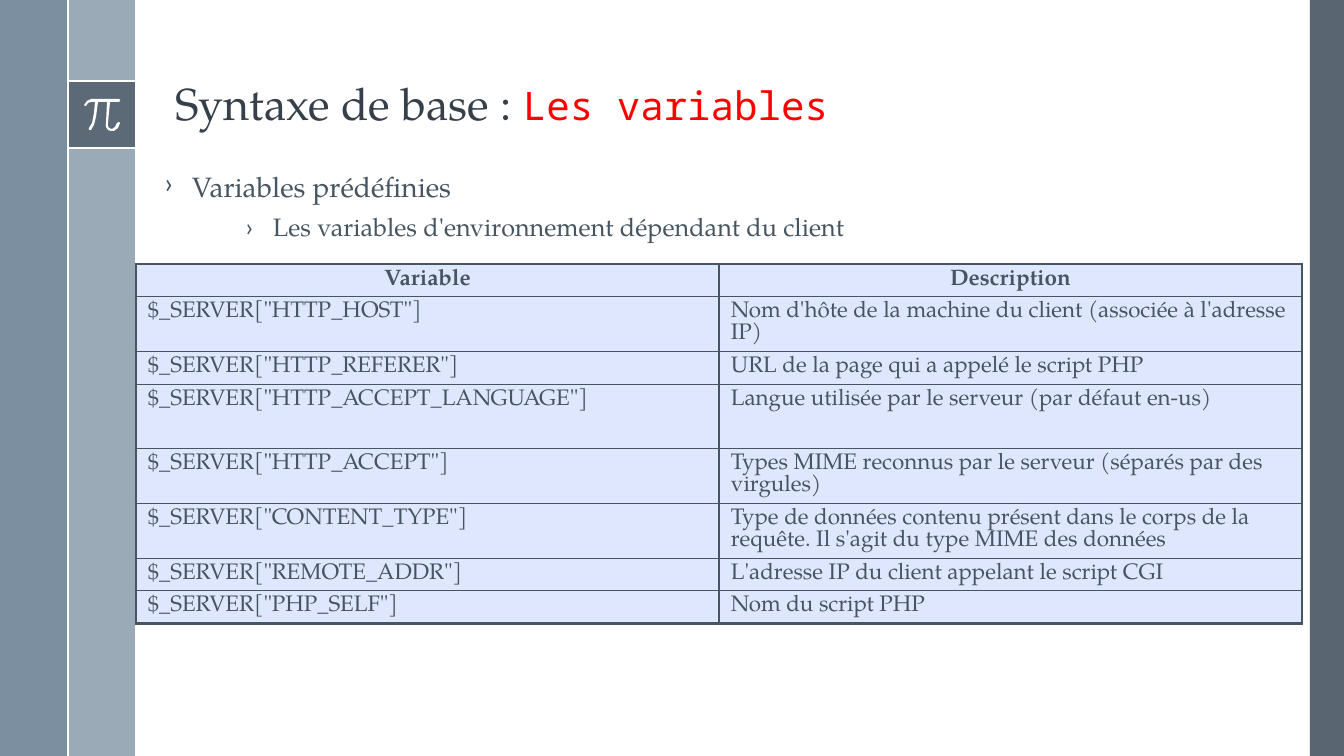
import dataclasses

import lxml.etree
import pptx
import pptx.dml.color
import pptx.enum.shapes
import pptx.enum.text
import pptx.oxml.ns
import pptx.util

SLIDE_WIDTH, SLIDE_HEIGHT = 1344, 756
EMU_PER_PX = 12192000 / SLIDE_WIDTH


@dataclasses.dataclass(frozen=True)
class Theme:
    serif: str = "TeX Gyre Pagella"
    mono: str = "Noto Sans Mono"
    sans: str = "Lato"
    title: str = "35404A"
    accent: str = "FF0000"
    text: str = "465562"
    white: str = "FFFFFF"
    dark_bar: str = "475562"
    pale_bar: str = "9BAAB7"
    blue_bar: str = "6A8093"
    cell: str = "DEE7FE"
    title_size: int = 32
    large_size: int = 28
    body_size: int = 20
    detail_size: int = 18
    table_size: int = 16
    thin: float = 1
    rule: float = 1.5
    thick: float = 2.25


THEME = Theme()

# Outline of the pi sign, in px from its top left corner
PI_OUTLINE = [
    (35, 0), (7, 0), (3, 2), (0, 6), (1, 7), (2, 7), (4, 4), (7, 3), (11, 3),
    (10, 14), (8, 24), (5, 29), (5, 31), (7, 31), (10, 26), (12, 18), (14, 3),
    (23, 3), (22, 24), (22, 28), (24, 31), (27, 32), (30, 32), (34, 29),
    (36, 24), (35, 23), (33, 24), (31, 28), (28, 30), (25, 29), (24, 27),
    (24, 24), (26, 3), (35, 3), (36, 2), (36, 1),
]

ROWS = [
    ("Variable", "Description"),
    ('$_SERVER["HTTP_HOST"]', "Nom d'hôte de la machine du client (associée à l'adresse IP)"),
    ('$_SERVER["HTTP_REFERER"]', "URL de la page qui a appelé le script PHP"),
    ('$_SERVER["HTTP_ACCEPT_LANGUAGE"]', "Langue utilisée par le serveur (par défaut en-us)"),
    ('$_SERVER["HTTP_ACCEPT"]', "Types MIME reconnus par le serveur (séparés par des virgules)"),
    ('$_SERVER["CONTENT_TYPE"]', "Type de données contenu présent dans le corps de la requête. "
                                 "Il s'agit du type MIME des données"),
    ('$_SERVER["REMOTE_ADDR"]', "L'adresse IP du client appelant le script CGI"),
    ('$_SERVER["PHP_SELF"]', "Nom du script PHP"),
]
ROW_HEIGHTS = [32, 55, 33, 64, 55, 55, 32, 33]


def px(length):
    return pptx.util.Emu(round(length * EMU_PER_PX))


def rgb(color):
    return pptx.dml.color.RGBColor.from_string(color)


def add_element(parent, tag, **attributes):
    return lxml.etree.SubElement(parent, pptx.oxml.ns.qn(tag), attributes)


def add_run(paragraph, text, font, size, color, bold=False):
    run = paragraph.add_run()
    run.text = text
    run.font.name = font
    run.font.size = pptx.util.Pt(size)
    run.font.color.rgb = rgb(color)
    run.font.bold = bold


def paint(shape, color, opacity=100):
    shape.shadow.inherit = False
    shape.fill.solid()
    shape.fill.fore_color.rgb = rgb(color)
    shape.line.fill.background()
    if opacity < 100:
        color_element = shape.fill._xPr.find(".//" + pptx.oxml.ns.qn("a:srgbClr"))
        add_element(color_element, "a:alpha", val=str(opacity * 1000))


def add_bar(slide, box, color, opacity=100):
    bar = slide.shapes.add_shape(
        pptx.enum.shapes.MSO_SHAPE.RECTANGLE, *[px(length) for length in box])
    paint(bar, color, opacity)


def add_rule(slide, *ends):
    rule = slide.shapes.add_connector(
        pptx.enum.shapes.MSO_CONNECTOR.STRAIGHT, *[px(length) for length in ends])
    rule.line.color.rgb = rgb(THEME.white)
    rule.line.width = pptx.util.Pt(THEME.rule)
    add_element(rule._element.spPr, "a:effectLst")


def add_side_bars(slide, left, top, width, height):
    """Two left bars with the pi tile, and the right bar."""
    bar, right_bar, tile_top = 67, 34, top + 81
    inner = left + bar
    add_bar(slide, (left + width - right_bar, top, right_bar, height), THEME.dark_bar, 90)
    add_bar(slide, (inner, top, bar + 1, height), THEME.pale_bar)
    add_bar(slide, (left, top, bar, height), THEME.blue_bar, 88)
    add_bar(slide, (inner, tile_top, bar + 1, bar), THEME.dark_bar, 75)
    for y in (tile_top, tile_top + bar):
        add_rule(slide, inner, y, inner + bar + 1, y)
    add_pi(slide, inner + 17, tile_top + 18)
    add_rule(slide, inner + 1, top, inner + 1, top + height)


def add_pi(slide, left, top):
    builder = slide.shapes.build_freeform(*PI_OUTLINE[0], scale=EMU_PER_PX)
    builder.add_line_segments(PI_OUTLINE[1:], close=True)
    paint(builder.convert_to_shape(px(left), px(top)), THEME.white)


def set_title(slide, left, top, width, height):
    title = slide.shapes.title
    title.left, title.top, title.width, title.height = map(px, (left, top, width, height))
    frame = title.text_frame
    frame.word_wrap = True
    frame.auto_size = pptx.enum.text.MSO_AUTO_SIZE.NONE
    frame.vertical_anchor = pptx.enum.text.MSO_ANCHOR.BOTTOM
    paragraph = frame.paragraphs[0]
    paragraph.alignment = pptx.enum.text.PP_ALIGN.LEFT
    paragraph.line_spacing = 0.9
    add_run(paragraph, "Syntaxe de base : ", THEME.serif, THEME.title_size, THEME.title)
    add_run(paragraph, "Les variables", THEME.mono, THEME.large_size, THEME.accent)


def format_bullet(paragraph, margin):
    properties = paragraph._p.get_or_add_pPr()
    properties.set("marL", str(px(margin)))
    properties.set("indent", str(px(-27)))
    add_element(properties, "a:buFont", typeface=THEME.sans)
    add_element(properties, "a:buChar", char="›")
    paragraph.line_spacing = 0.9


def add_bullets(slide, left, top, width, height):
    frame = slide.shapes.add_textbox(px(left), px(top), px(width), px(height)).text_frame
    frame.word_wrap = True
    heading = frame.paragraphs[0]
    format_bullet(heading, 27)
    add_run(heading, "Variables prédéfinies", THEME.serif, THEME.body_size, THEME.text)
    add_run(heading, " ", THEME.sans, THEME.large_size, THEME.text)
    detail = frame.add_paragraph()
    detail.level = 2
    format_bullet(detail, 108)
    detail.space_before = pptx.util.Pt(6)
    add_run(detail, "Les variables d'environnement dépendant du client",
            THEME.serif, THEME.detail_size, THEME.text)


def set_borders(cell, outer_sides):
    properties = cell._tc.get_or_add_tcPr()
    for position, side in enumerate("LRTB"):
        width = THEME.thick if side in outer_sides else THEME.thin
        line = add_element(properties, "a:ln" + side, w=str(pptx.util.Pt(width)))
        add_element(add_element(line, "a:solidFill"), "a:srgbClr", val=THEME.text)
        properties.insert(position, line)


def add_variable_table(slide, left, top, width):
    row_count, column_count = len(ROWS), len(ROWS[0])
    table = slide.shapes.add_table(
        row_count, column_count, px(left), px(top), px(width), px(sum(ROW_HEIGHTS))).table
    table.first_row = table.horz_banding = False
    for column in table.columns:
        column.width = px(width / column_count)
    for row, (texts, height) in enumerate(zip(ROWS, ROW_HEIGHTS)):
        table.rows[row].height = px(height)
        for column, text in enumerate(texts):
            cell = table.cell(row, column)
            cell.margin_left = cell.margin_right = px(12)
            cell.margin_top = cell.margin_bottom = px(5)
            cell.fill.solid()
            cell.fill.fore_color.rgb = rgb(THEME.cell)
            edges = {"L": column == 0, "R": column == column_count - 1,
                     "T": row == 0, "B": row == row_count - 1}
            set_borders(cell, [side for side, outer in edges.items() if outer])
            paragraph = cell.text_frame.paragraphs[0]
            paragraph.line_spacing = pptx.util.Pt(THEME.table_size)
            if row == 0:
                paragraph.alignment = pptx.enum.text.PP_ALIGN.CENTER
            add_run(paragraph, text, THEME.serif, THEME.table_size, THEME.text, bold=row == 0)


def main():
    presentation = pptx.Presentation()
    presentation.slide_width, presentation.slide_height = px(SLIDE_WIDTH), px(SLIDE_HEIGHT)
    slide = presentation.slides.add_slide(presentation.slide_layouts[5])
    add_side_bars(slide, 0, 0, SLIDE_WIDTH, SLIDE_HEIGHT)
    set_title(slide, 165, 17, 1178, 118)
    add_bullets(slide, 155, 159, 1166, 529)
    add_variable_table(slide, 136, 264, 1166)
    presentation.save("out.pptx")


if __name__ == "__main__":
    main()
